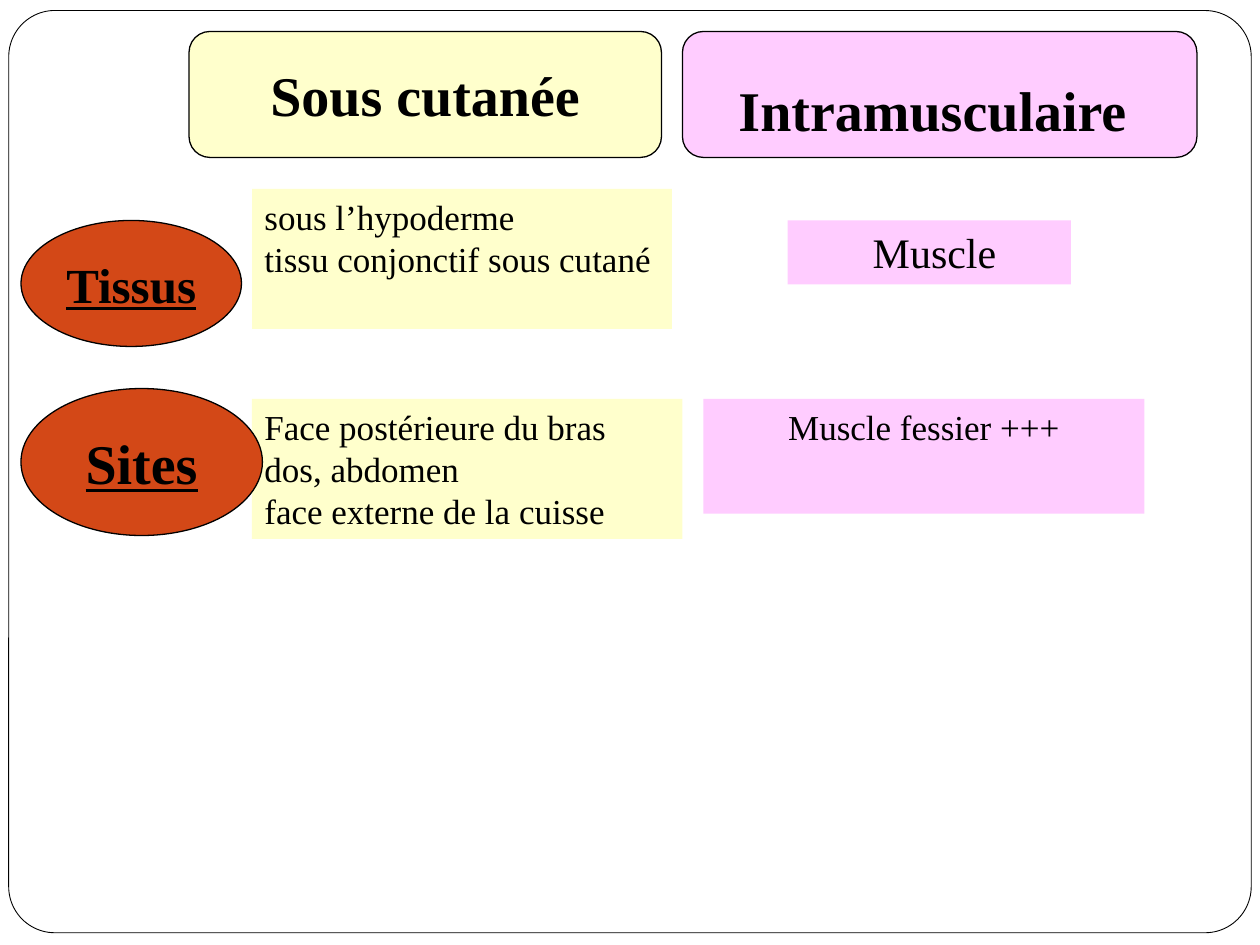
from pptx import Presentation
from pptx.dml.color import RGBColor
from pptx.enum.shapes import MSO_SHAPE as SHAPE
from pptx.enum.text import MSO_ANCHOR as ANCHOR, PP_ALIGN as ALIGN
from pptx.util import Pt

YELLOW, PINK, ORANGE = "FFFFCC", "FFCCFF", "D34817"
BLACK, WHITE = "000000", "FFFFFF"
FONT = "Times New Roman"
FRAME = (5, 6, 710, 527)

# (lines, box, fill, size, alignment)
ANSWERS = [
    (["sous l’hypoderme", "tissu conjonctif sous cutané"],
     (144, 108, 240, 80), YELLOW, 20, ALIGN.LEFT),
    ([" Muscle"], (450, 126, 162, 36.5), PINK, 24, ALIGN.CENTER),
    (["Face postérieure du bras", "dos, abdomen", "face externe de la cuisse"],
     (144, 228, 246, 80), YELLOW, 20, ALIGN.LEFT),
    (["Muscle fessier +++"], (402, 228, 252, 65.5), PINK, 20, ALIGN.CENTER),
]
# (text, box, fill, top inset)
ROUTES = [
    ("Sous cutanée", (108, 18, 270, 72), YELLOW, 3.6),
    ("Intramusculaire ", (390, 18, 294, 72), PINK, 20),
]
# (text, box, size)
CRITERIA = [
    ("Tissus", (12, 126, 126, 72), 28),
    ("Sites", (12, 222, 138, 84), 32),
]


def color(value):
    return RGBColor.from_string(value)


def add_box(slide, kind, box, fill, line_width=None):
    sp = slide.shapes.add_shape(kind, *map(Pt, box))
    sp.shadow.inherit = False
    sp.fill.solid()
    sp.fill.fore_color.rgb = color(fill)
    if line_width:
        sp.line.color.rgb = color(BLACK)
        sp.line.width = Pt(line_width)
    else:
        sp.line.fill.background()
    return sp


def write(sp, lines, size, align, anchor, wrap=True, bold=False, underline=False):
    tf = sp.text_frame
    tf.word_wrap = wrap
    tf.vertical_anchor = anchor
    tf.text = "\n".join(lines)
    for p in tf.paragraphs:
        p.alignment = align
        p.font.name = FONT
        p.font.size = Pt(size)
        p.font.bold = bold
        p.font.underline = underline
        p.font.color.rgb = color(BLACK)


def main():
    prs = Presentation()
    prs.slide_width, prs.slide_height = Pt(720), Pt(540)
    slide = prs.slides.add_slide(prs.slide_layouts[6])

    frame = add_box(slide, SHAPE.ROUNDED_RECTANGLE, FRAME, WHITE, 0.5)
    frame.adjustments[0] = 0.05

    for lines, box, fill, size, align in ANSWERS:
        sp = add_box(slide, SHAPE.RECTANGLE, box, fill)
        write(sp, lines, size, align, ANCHOR.TOP)

    for text, box, fill, top_inset in ROUTES:
        sp = add_box(slide, SHAPE.FLOWCHART_ALTERNATE_PROCESS, box, fill, 0.75)
        write(sp, [text], 32, ALIGN.CENTER, ANCHOR.MIDDLE, wrap=False, bold=True)
        sp.text_frame.margin_top = Pt(top_inset)

    for text, box, size in CRITERIA:
        sp = add_box(slide, SHAPE.OVAL, box, ORANGE, 0.75)
        write(sp, [text], size, ALIGN.CENTER, ANCHOR.MIDDLE, wrap=False,
              bold=True, underline=True)

    prs.save("out.pptx")


if __name__ == "__main__":
    main()
